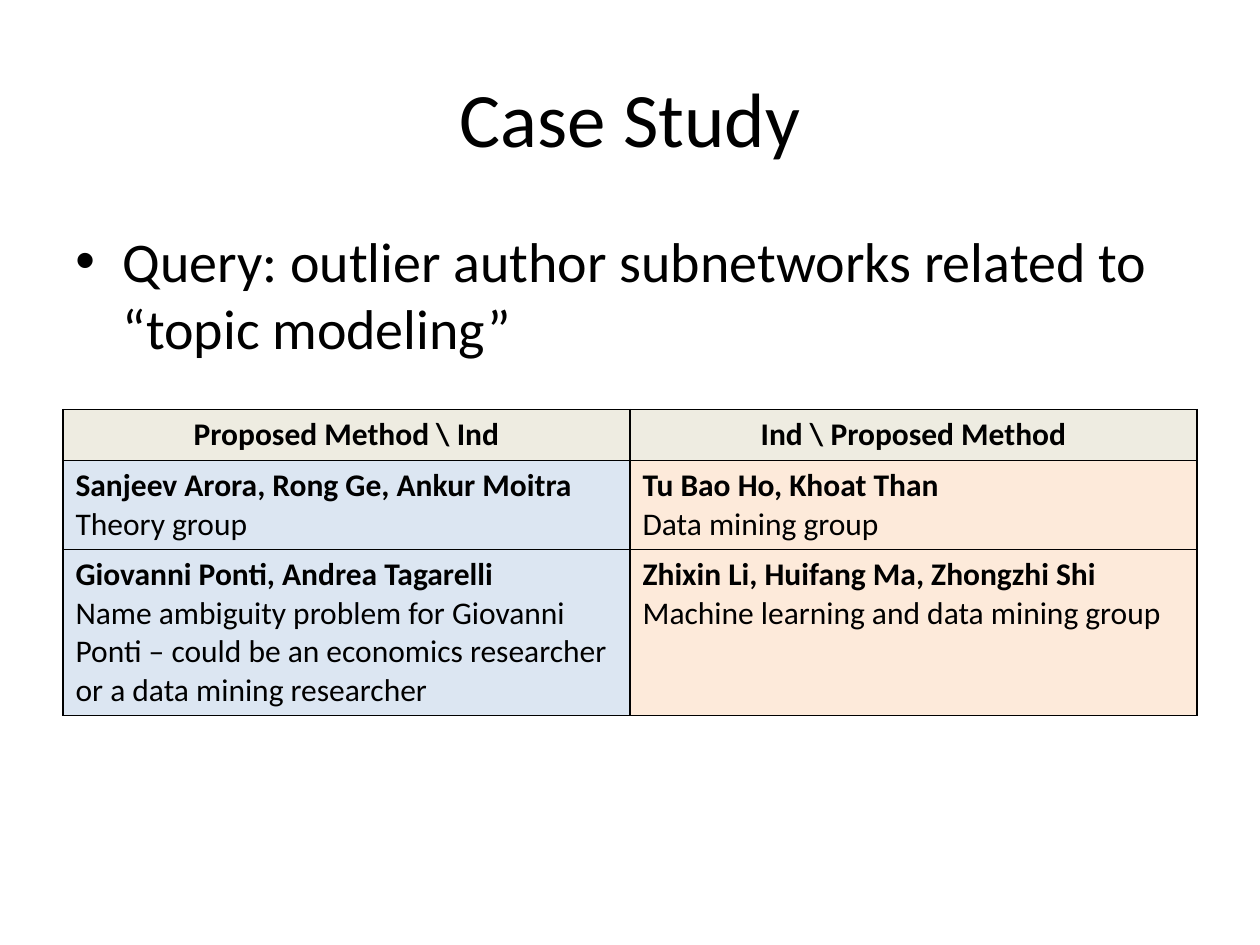
from lxml.etree import SubElement
from pptx import Presentation
from pptx.dml.color import RGBColor
from pptx.enum.text import MSO_ANCHOR as Anchor, PP_ALIGN as Align
from pptx.oxml.ns import qn
from pptx.util import Pt

BLACK = RGBColor(0x00, 0x00, 0x00)
HEADER_FILL = RGBColor(0xEE, 0xEC, 0xE1)
COLUMN_FILLS = [RGBColor(0xDC, 0xE6, 0xF2), RGBColor(0xFD, 0xEA, 0xDA)]
FONT = "Calibri"
LEFT, WIDTH = 36, 648

HEADERS = ["Proposed Method \\ Ind", "Ind \\ Proposed Method"]
GROUPS = [
    [("Sanjeev Arora, Rong Ge, Ankur Moitra", "Theory group"),
     ("Tu Bao Ho, Khoat Than", "Data mining group")],
    [("Giovanni Ponti, Andrea Tagarelli",
      "Name ambiguity problem for Giovanni Ponti – could be an economics "
      "researcher or a data mining researcher"),
     ("Zhixin Li, Huifang Ma, Zhongzhi Shi",
      "Machine learning and data mining group")],
]
ROW_HEIGHTS = [29, 51, 95]


def write(para, text, size, bold=False, align=Align.LEFT):
    para.alignment = align
    span = para.add_run()
    span.text = text
    span.font.name = FONT
    span.font.size = Pt(size)
    span.font.bold = bold
    span.font.color.rgb = BLACK


def add_text(page, text, top, height, size, align=Align.LEFT, anchor=Anchor.TOP):
    """Add a text box across the content width and return its paragraph."""
    box = page.shapes.add_textbox(Pt(LEFT), Pt(top), Pt(WIDTH), Pt(height))
    frame = box.text_frame
    frame.word_wrap = True
    frame.vertical_anchor = anchor
    para = frame.paragraphs[0]
    write(para, text, size, align=align)
    return para


def add_bullet(para, indent):
    properties = para._p.get_or_add_pPr()
    properties.set("marL", str(Pt(indent)))
    properties.set("indent", str(-Pt(indent)))
    SubElement(properties, qn("a:buFont"), typeface="Arial")
    SubElement(properties, qn("a:buChar"), char="•")


def add_borders(cell, width=1):
    properties = cell._tc.get_or_add_tcPr()
    for position, side in enumerate(("a:lnL", "a:lnR", "a:lnT", "a:lnB")):
        line = properties.makeelement(qn(side), {"w": str(Pt(width))})
        fill = SubElement(line, qn("a:solidFill"))
        SubElement(fill, qn("a:srgbClr"), val=str(BLACK))
        properties.insert(position, line)


def style_cell(cell, color):
    cell.fill.solid()
    cell.fill.fore_color.rgb = color
    add_borders(cell)


def add_group_table(page, top):
    table = page.shapes.add_table(
        len(ROW_HEIGHTS), len(HEADERS),
        Pt(LEFT), Pt(top), Pt(WIDTH), Pt(sum(ROW_HEIGHTS))).table
    for row, height in zip(table.rows, ROW_HEIGHTS):
        row.height = Pt(height)
    for column, header in enumerate(HEADERS):
        cell = table.cell(0, column)
        write(cell.text_frame.paragraphs[0], header, 18, True, Align.CENTER)
        style_cell(cell, HEADER_FILL)
    for row, groups in enumerate(GROUPS, start=1):
        for column, (authors, note) in enumerate(groups):
            cell = table.cell(row, column)
            write(cell.text_frame.paragraphs[0], authors, 18, bold=True)
            write(cell.text_frame.add_paragraph(), note, 18)
            style_cell(cell, COLUMN_FILLS[column])


def main():
    deck = Presentation()
    deck.slide_width, deck.slide_height = Pt(720), Pt(540)
    page = deck.slides.add_slide(deck.slide_layouts[6])
    add_text(page, "Case Study", 21.6, 90, 44, Align.CENTER, Anchor.MIDDLE)
    query = add_text(
        page, "Query: outlier author subnetworks related to “topic modeling”",
        126, 356.4, 32)
    add_bullet(query, 27)
    add_group_table(page, 234)
    deck.save("out.pptx")


if __name__ == "__main__":
    main()
